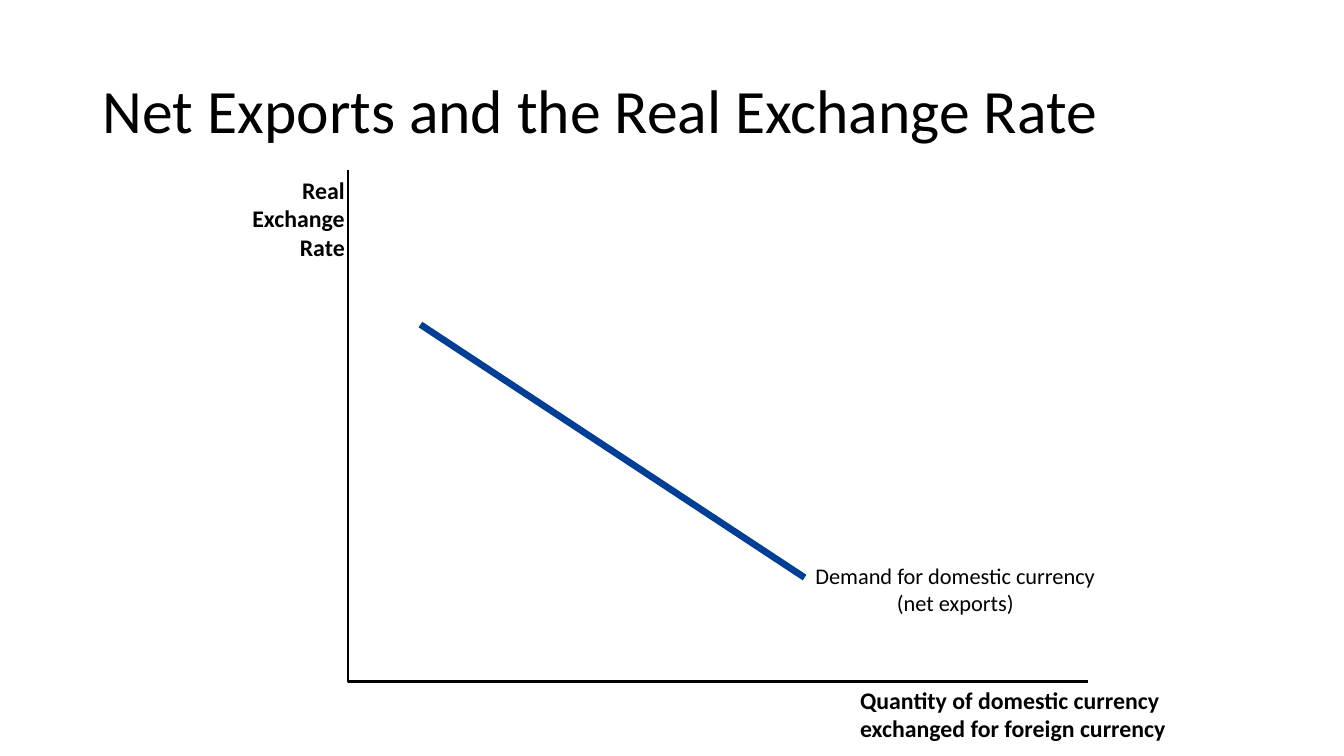
from lxml.etree import SubElement
from pptx import Presentation
from pptx.dml.color import RGBColor
from pptx.enum.shapes import MSO_CONNECTOR
from pptx.enum.text import MSO_ANCHOR, MSO_AUTO_SIZE, PP_ALIGN
from pptx.oxml.ns import qn
from pptx.util import Inches, Pt

BLACK = RGBColor(0x00, 0x00, 0x00)
BLUE = RGBColor(0x00, 0x3F, 0x95)

TITLE = "Net Exports and the Real Exchange Rate"
TITLE_BOX = (0.92, 0.4, 11.5, 1.45)
AXES = [(3.45, 1.69), (3.45, 6.76), (10.79, 6.76)]
DEMAND = [(4.17, 3.22), (7.98, 5.73)]
LABELS = [
    ("Quantity of domestic currency exchanged for foreign currency",
     (8.53, 6.8, 3.78, 0.57), dict(size=17, bold=True)),
    ("Real Exchange Rate",
     (2.28, 1.74, 1.14, 0.86), dict(size=17, bold=True, align=PP_ALIGN.RIGHT)),
    ("Demand for domestic currency\n(net exports)",
     (8.07, 5.58, 2.81, 0.54), dict(size=16, align=PP_ALIGN.CENTER, wrap=False)),
]


def inches(values):
    return [Inches(v) for v in values]


def write(tf, text, size, bold=False, align=PP_ALIGN.LEFT, wrap=True,
          anchor=MSO_ANCHOR.TOP, margin=0, spacing=None):
    tf.auto_size = MSO_AUTO_SIZE.NONE
    tf.word_wrap = wrap
    tf.vertical_anchor = anchor
    if margin is not None:
        tf.margin_left = tf.margin_right = Inches(margin)
        tf.margin_top = tf.margin_bottom = Inches(margin)
    p = tf.paragraphs[0]
    p.text = text
    p.alignment = align
    p.line_spacing = spacing
    for r in p.runs:
        r.font.name = "Calibri"
        r.font.size = Pt(size)
        r.font.bold = bold
        r.font.color.rgb = BLACK


def main():
    prs = Presentation()
    prs.slide_width, prs.slide_height = Inches(13.33), Inches(7.5)
    s = prs.slides.add_slide(prs.slide_layouts[5])

    title = s.shapes.title
    title.left, title.top, title.width, title.height = inches(TITLE_BOX)
    write(title.text_frame, TITLE, size=44, anchor=MSO_ANCHOR.MIDDLE,
          margin=None, spacing=0.9)

    start, *rest = [inches(point) for point in AXES]
    builder = s.shapes.build_freeform(*start)
    builder.add_line_segments(rest, close=False)
    axes = builder.convert_to_shape()
    axes.shadow.inherit = False
    axes.fill.background()
    axes.line.color.rgb = BLACK
    axes.line.width = Pt(1.63)

    ends = [c for point in DEMAND for c in inches(point)]
    demand = s.shapes.add_connector(MSO_CONNECTOR.STRAIGHT, *ends)
    demand.line.color.rgb = BLUE
    demand.line.width = Pt(4.75)
    SubElement(demand._element.spPr, qn("a:effectLst"))

    for text, box, style in LABELS:
        sp = s.shapes.add_textbox(*inches(box))
        write(sp.text_frame, text, **style)

    prs.save("out.pptx")


if __name__ == "__main__":
    main()
